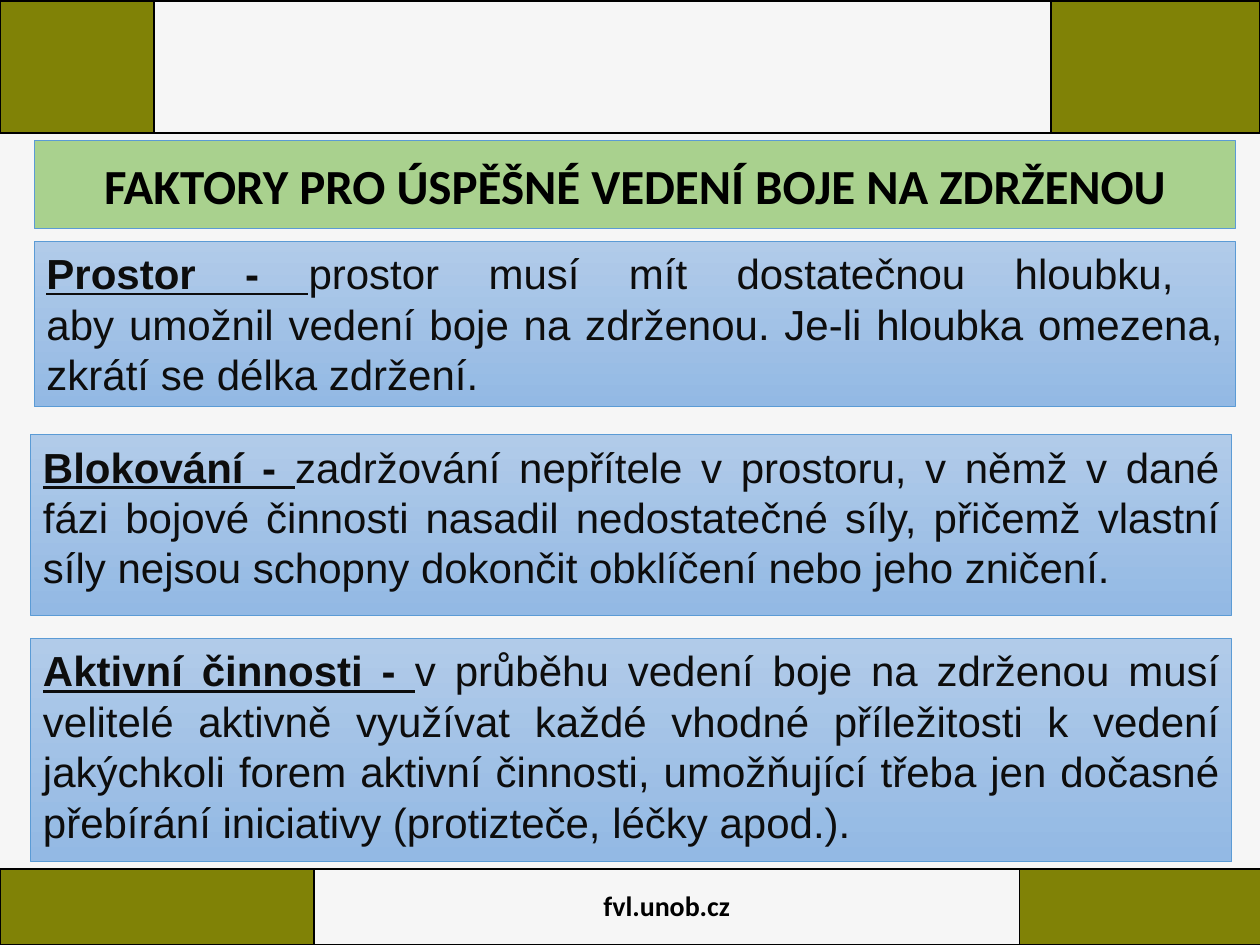
import pptx
import pptx.util
import pptx.dml.color
import pptx.enum.shapes
import pptx.enum.text
import pptx.oxml
import pptx.oxml.ns
from pptx.util import Pt

ALIGN = pptx.enum.text.PP_ALIGN
ANCHOR = pptx.enum.text.MSO_ANCHOR
OLIVE = "808206"
BORDER_XML = (
    '<a:{side} %s w="12700"><a:solidFill><a:srgbClr val="000000"/>'
    "</a:solidFill></a:{side}>" % pptx.oxml.ns.nsdecls("a")
)

# Each factor: box (left, top, width, height), lead-in, lines of text
FACTORS = [
    ((19.5, 138, 686.5, 94.5), "Prostor - ",
     ["prostor musí mít dostatečnou hloubku, ",
      "aby umožnil vedení boje na zdrženou. Je-li hloubka omezena, "
      "zkrátí se délka zdržení."]),
    ((17.5, 248.5, 686.5, 103), "Blokování - ",
     ["zadržování nepřítele v prostoru, v němž v dané fázi bojové činnosti "
      "nasadil nedostatečné síly, přičemž vlastní síly nejsou schopny "
      "dokončit obklíčení nebo jeho zničení."]),
    ((17.5, 365, 686.5, 127.5), "Aktivní činnosti - ",
     ["v průběhu vedení boje na zdrženou musí velitelé aktivně využívat "
      "každé vhodné příležitosti k vedení jakýchkoli forem aktivní činnosti, "
      "umožňující třeba jen dočasné přebírání iniciativy "
      "(protizteče, léčky apod.)."]),
]


def color(hex_text):
    return pptx.dml.color.RGBColor.from_string(hex_text)


def style_font(font, name, size, hex_text, bold=False, underline=False):
    font.name = name
    font.size = Pt(size)
    font.bold = bold
    font.underline = underline
    font.color.rgb = color(hex_text)


def add_band(page, box, widths, label=""):
    """One-row table: olive ends around a plain middle cell."""
    left, top, width, height = map(Pt, box)
    table = page.shapes.add_table(1, len(widths), left, top, width, height).table
    table.first_row = table.horz_banding = False
    table.rows[0].height = height
    for index, column_width in enumerate(widths):
        table.columns[index].width = Pt(column_width)
        cell = table.cell(0, index)
        properties = cell._tc.get_or_add_tcPr()
        for side in ("lnL", "lnR", "lnT", "lnB"):
            properties.append(pptx.oxml.parse_xml(BORDER_XML.format(side=side)))
        if index == 1:
            cell.fill.background()
        else:
            cell.fill.solid()
            cell.fill.fore_color.rgb = color(OLIVE)
    if label:
        cell = table.cell(0, 1)
        cell.vertical_anchor = ANCHOR.MIDDLE
        para = cell.text_frame.paragraphs[0]
        para.text = label
        para.alignment = ALIGN.CENTER
        style_font(para.runs[0].font, "Calibri", 16, "000000", bold=True)


def add_panel(page, box, anchor):
    """Thin-lined rectangle without shadow, ready for text."""
    panel = page.shapes.add_shape(
        pptx.enum.shapes.MSO_SHAPE.RECTANGLE, *map(Pt, box))
    panel.shadow.inherit = False
    panel.line.color.rgb = color("5B9BD5")
    panel.line.width = Pt(0.5)
    panel.text_frame.word_wrap = True
    panel.text_frame.vertical_anchor = anchor
    return panel


def add_title(page, box, text):
    panel = add_panel(page, box, ANCHOR.MIDDLE)
    panel.fill.solid()
    panel.fill.fore_color.rgb = color("A9D18E")
    para = panel.text_frame.paragraphs[0]
    para.text = text
    para.alignment = ALIGN.CENTER
    style_font(para.runs[0].font, "Calibri", 28, "000000", bold=True)


def add_factor(page, box, lead, lines):
    panel = add_panel(page, box, ANCHOR.TOP)
    # Light blue at the top, deeper blue at the bottom
    panel.fill.gradient()
    panel.fill.gradient_angle = 270
    for stop, hex_text in zip(panel.fill.gradient_stops, ("B1CBE9", "93B9E4")):
        stop.color.rgb = color(hex_text)
    # Underlined lead-in, then the explanation
    para = panel.text_frame.paragraphs[0]
    para.alignment = ALIGN.JUSTIFY
    span = para.add_run()
    span.text = lead
    style_font(span.font, "Arial", 24, "0D0D0D", bold=True, underline=True)
    for index, line in enumerate(lines):
        if index:
            para.add_line_break()
        span = para.add_run()
        span.text = line
        style_font(span.font, "Arial", 24, "0D0D0D")


def main():
    deck = pptx.Presentation()
    deck.slide_width, deck.slide_height = Pt(720), Pt(540)
    page = deck.slides.add_slide(deck.slide_layouts[6])
    page.background.fill.solid()
    page.background.fill.fore_color.rgb = color("F6F6F6")

    # Bands at the bottom and top edges
    add_band(page, (0, 496.5, 720.5, 43.5), (179.5, 403, 138), "fvl.unob.cz")
    add_band(page, (0, 0.5, 720, 75.5), (88, 512.5, 119.5))

    # Factors and heading
    for box, lead, lines in FACTORS:
        add_factor(page, box, lead, lines)
    add_title(page, (19.5, 80.5, 686.5, 50),
              "FAKTORY PRO ÚSPĚŠNÉ VEDENÍ BOJE NA ZDRŽENOU")
    deck.save("out.pptx")


if __name__ == "__main__":
    main()
